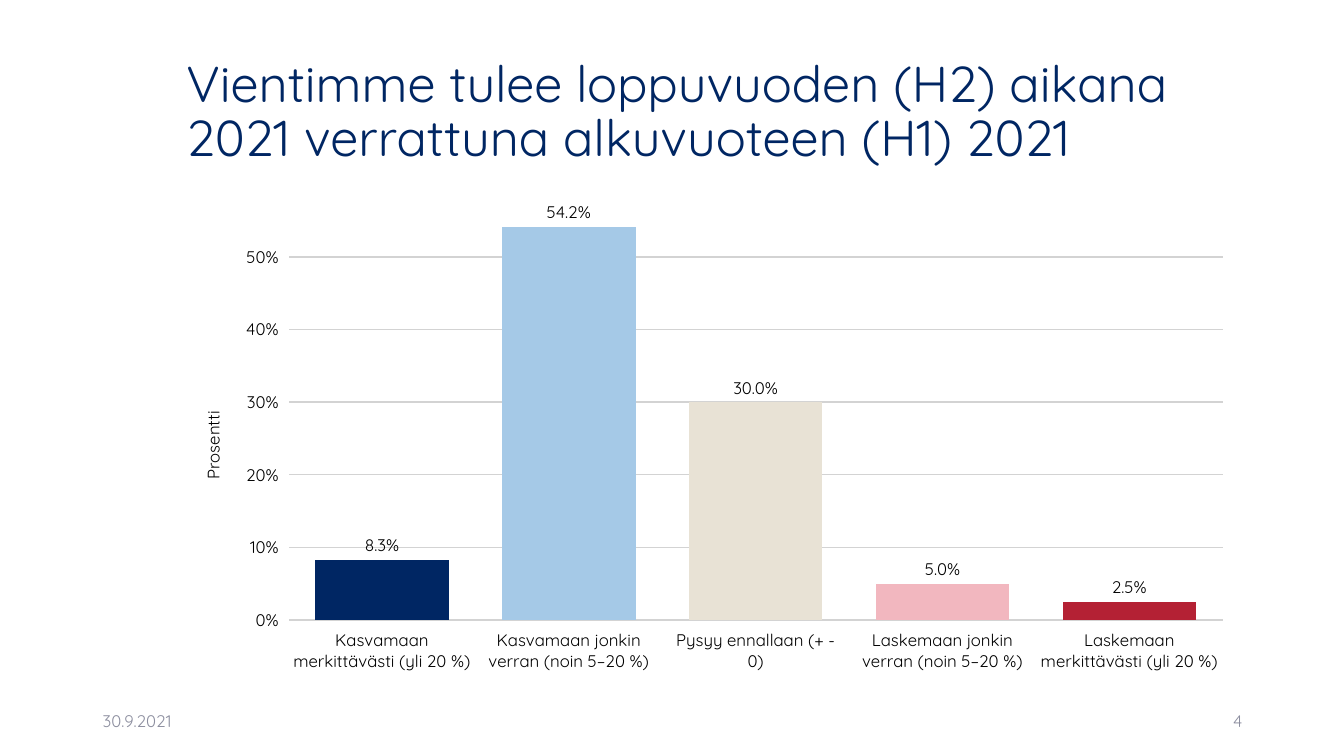
from lxml import etree
from pptx import Presentation
from pptx.chart.data import CategoryChartData
from pptx.dml.color import RGBColor
from pptx.enum.chart import XL_CHART_TYPE, XL_LABEL_POSITION, XL_TICK_MARK
from pptx.enum.text import MSO_ANCHOR, PP_ALIGN
from pptx.oxml.ns import qn
from pptx.util import Inches, Pt

# Content
FONT = "Quicksand"
NAVY = RGBColor(0x00, 0x26, 0x63)
LIGHT_BLUE = RGBColor(0xA5, 0xC9, 0xE7)
SAND = RGBColor(0xE8, 0xE2, 0xD5)
PINK = RGBColor(0xF2, 0xB7, 0xBF)
RED = RGBColor(0xB4, 0x21, 0x34)
BLACK = RGBColor(0x00, 0x00, 0x00)
FOOTER_GREY = RGBColor(0x8C, 0x8E, 0x9F)
GRID_GREY = RGBColor(0xD3, 0xD3, 0xD3)

# text, (left, top, width, height), size, colour, alignment, line spacing
TEXTS = [
    ("Vientimme tulee loppuvuoden (H2) aikana 2021 verrattuna alkuvuoteen (H1) 2021",
     (1.75, 0.4, 10.59, 1.45), 36, NAVY, PP_ALIGN.LEFT, 0.9),
    ("30.9.2021", (0.92, 6.95, 3, 0.4), 12, FOOTER_GREY, PP_ALIGN.LEFT, 1.0),
    ("4", (9.42, 6.95, 3, 0.4), 12, FOOTER_GREY, PP_ALIGN.RIGHT, 1.0),
]

ANSWERS = [
    ("Kasvamaan merkittävästi (yli 20 %)", 0.083, NAVY),
    ("Kasvamaan jonkin verran (noin 5–20 %)", 0.542, LIGHT_BLUE),
    ("Pysyy ennallaan (+ - 0)", 0.3, SAND),
    ("Laskemaan jonkin verran (noin 5–20 %)", 0.05, PINK),
    ("Laskemaan merkittävästi (yli 20 %)", 0.025, RED),
]
CHART_BOX = (1.75, 2, 10.59, 4.76)


def style_font(font, size, color):
    font.name = FONT
    font.size = Pt(size)
    font.bold = False
    font.color.rgb = color


def add_text(slide, text, box, size, color, alignment, spacing):
    shape = slide.shapes.add_textbox(*map(Inches, box))
    text_frame = shape.text_frame
    text_frame.word_wrap = True
    text_frame.vertical_anchor = MSO_ANCHOR.MIDDLE
    text_frame.text = text
    paragraph = text_frame.paragraphs[0]
    paragraph.alignment = alignment
    paragraph.line_spacing = spacing
    style_font(paragraph.runs[0].font, size, color)


def set_layout(element, index, **settings):
    """Place a chart part by fractions of the chart area."""
    for old_layout in element.findall(qn("c:layout")):
        element.remove(old_layout)
    layout = etree.Element(qn("c:layout"))
    manual = etree.SubElement(layout, qn("c:manualLayout"))
    for name, value in settings.items():
        etree.SubElement(manual, qn("c:" + name)).set("val", str(value))
    element.insert(index, layout)


def add_answer_chart(slide):
    chart_data = CategoryChartData(number_format="0.0%")
    chart_data.categories = [label for label, _, _ in ANSWERS]
    chart_data.add_series("Series 1", [value for _, value, _ in ANSWERS])
    chart = slide.shapes.add_chart(
        XL_CHART_TYPE.COLUMN_CLUSTERED, *map(Inches, CHART_BOX), chart_data).chart
    chart.has_legend = False
    chart.has_title = False
    style_font(chart.font, 12, BLACK)

    # Columns and their labels
    plot = chart.plots[0]
    plot.gap_width = 40
    plot.vary_by_categories = False
    series = plot.series[0]
    for index, (_, _, color) in enumerate(ANSWERS):
        fill = series.points[index].format.fill
        fill.solid()
        fill.fore_color.rgb = color
    labels = series.data_labels
    labels.show_value = True
    labels.position = XL_LABEL_POSITION.OUTSIDE_END
    labels.number_format = "0.0%"
    labels.number_format_is_linked = False
    style_font(labels.font, 12, BLACK)

    # Axes
    for axis in (chart.category_axis, chart.value_axis):
        axis.format.line.fill.background()
        axis.major_tick_mark = XL_TICK_MARK.OUTSIDE
        style_font(axis.tick_labels.font, 12, BLACK)
    value_axis = chart.value_axis
    value_axis.minimum_scale = 0
    value_axis.maximum_scale = 0.55
    value_axis.major_unit = 0.1
    value_axis.tick_labels.number_format = "0%"
    value_axis.tick_labels.number_format_is_linked = False
    value_axis.has_major_gridlines = True
    grid_line = value_axis.major_gridlines.format.line
    grid_line.color.rgb = GRID_GREY
    grid_line.width = Pt(1)
    axis_title = value_axis.axis_title
    axis_title.text_frame.text = "Prosentti"
    style_font(axis_title.text_frame.paragraphs[0].runs[0].font, 12, BLACK)

    # Plot area and axis title placement
    title_element = value_axis._element.find(qn("c:title"))
    set_layout(title_element, 1, xMode="edge", yMode="edge", x=0.02, y=0.43)
    plot_area = chart._chartSpace.chart.plotArea
    set_layout(plot_area, 0, layoutTarget="inner", xMode="edge", yMode="edge",
               x=0.105, y=0.038, w=0.875, h=0.834)


def main():
    presentation = Presentation()
    presentation.slide_width = Inches(13.33)
    presentation.slide_height = Inches(7.5)
    slide = presentation.slides.add_slide(presentation.slide_layouts[6])
    for text in TEXTS:
        add_text(slide, *text)
    add_answer_chart(slide)
    presentation.save("out.pptx")


if __name__ == "__main__":
    main()
